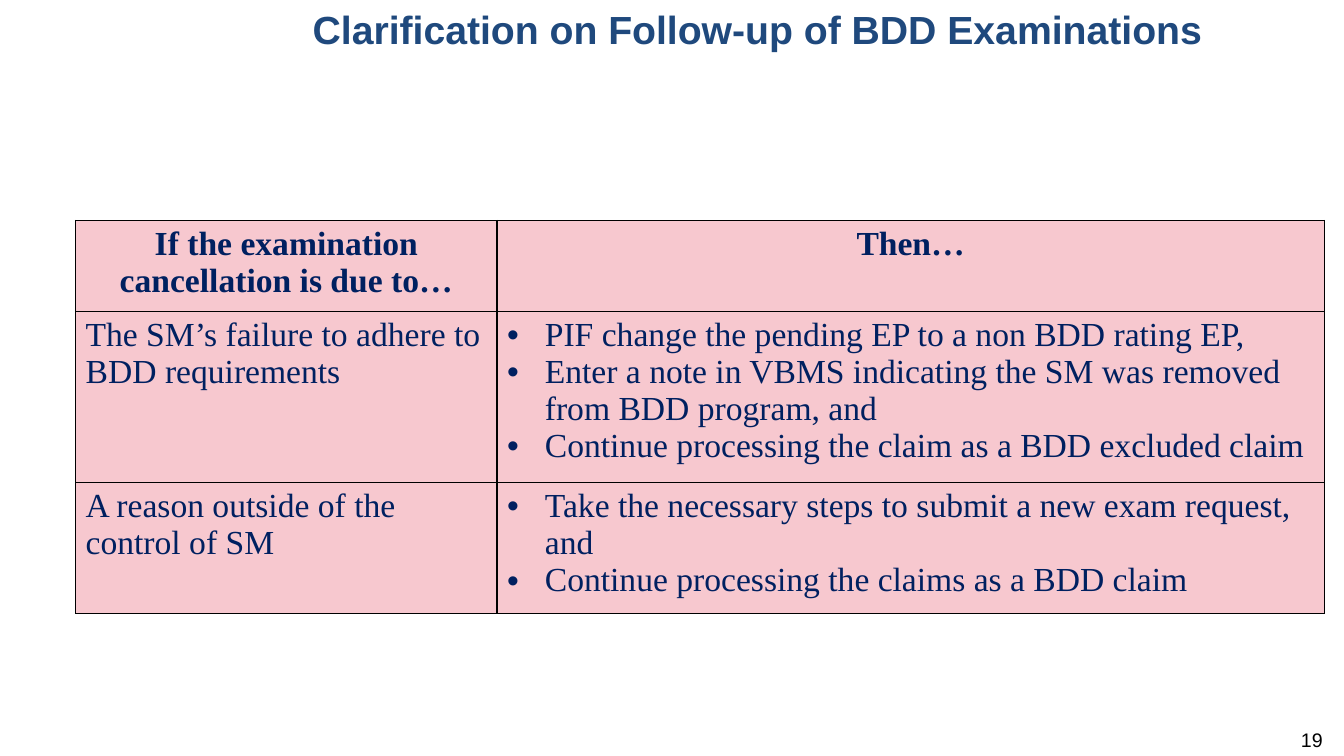
import pptx
import pptx.dml.color
import pptx.enum.text
import pptx.oxml
import pptx.oxml.ns
import pptx.util

Pt = pptx.util.Pt
ALIGN = pptx.enum.text.PP_ALIGN
NAMESPACE = pptx.oxml.ns.nsdecls("a")

HEADERS = ["If the examination cancellation is due to…", "Then…"]
CASES = [
    ("The SM’s failure to adhere to BDD requirements", [
        "PIF change the pending EP to a non BDD rating EP,",
        "Enter a note in VBMS indicating the SM was removed from BDD program, and",
        "Continue processing the claim as a BDD excluded claim",
    ]),
    ("A reason outside of the control of SM", [
        "Take the necessary steps to submit a new exam request, and",
        "Continue processing the claims as a BDD claim",
    ]),
]


def color(value):
    return pptx.dml.color.RGBColor.from_string(value)


class SlideBuilder:
    title_format = {"name": "Arial", "size": Pt(28), "bold": True}
    number_format = {"name": "Arial", "size": Pt(14), "bold": False}
    cell_format = {"name": "Times New Roman", "size": Pt(24), "bold": False}
    header_format = {**cell_format, "bold": True}
    title_color = "1F497D"
    number_color = "000000"
    cell_color = "002060"
    cell_fill = "F7C8CF"
    border_color = "000000"
    bullet_indent = Pt(27)

    def __init__(self, page):
        self.page = page

    def fill_frame(self, frame, lines, text_format, text_color, align, bullets=False):
        """Fill a text frame with one paragraph per line."""
        frame.word_wrap = True
        for index, line in enumerate(lines):
            para = frame.add_paragraph() if index else frame.paragraphs[0]
            para.alignment = align
            if bullets:
                self.add_bullet(para)
            span = para.add_run()
            span.text = line
            for name, value in text_format.items():
                setattr(span.font, name, value)
            span.font.color.rgb = color(text_color)

    def add_bullet(self, para):
        properties = para._p.get_or_add_pPr()
        properties.set("marL", str(self.bullet_indent))
        properties.set("indent", str(-self.bullet_indent))
        for tag, attribute in (("buFont", 'typeface="Arial"'), ("buChar", 'char="•"')):
            properties.append(pptx.oxml.parse_xml(f"<a:{tag} {NAMESPACE} {attribute}/>"))

    def add_text(self, bounds, text, text_format, text_color, align, margins=None):
        box = self.page.shapes.add_textbox(*map(Pt, bounds))
        for name, value in (margins or {}).items():
            setattr(box.text_frame, name, value)
        self.fill_frame(box.text_frame, [text], text_format, text_color, align)

    def add_borders(self, cell):
        properties = cell._tc.get_or_add_tcPr()
        for side in "LRTB":
            properties.append(pptx.oxml.parse_xml(
                f'<a:ln{side} {NAMESPACE} w="{Pt(1)}"><a:solidFill>'
                f'<a:srgbClr val="{self.border_color}"/></a:solidFill></a:ln{side}>'))

    def add_cell(self, cell, lines, text_format, align, bullets=False):
        self.add_borders(cell)
        cell.fill.solid()
        cell.fill.fore_color.rgb = color(self.cell_fill)
        self.fill_frame(cell.text_frame, lines, text_format, self.cell_color, align, bullets)

    def add_case_table(self, left, top, widths, heights):
        frame = self.page.shapes.add_table(
            len(heights), len(widths), Pt(left), Pt(top), Pt(sum(widths)), Pt(sum(heights)))
        table = frame.table
        table.horz_banding = False
        for column, width in zip(table.columns, widths):
            column.width = Pt(width)
        for row, height in zip(table.rows, heights):
            row.height = Pt(height)
        for index, header in enumerate(HEADERS):
            self.add_cell(table.cell(0, index), [header], self.header_format, ALIGN.CENTER)
        for index, (reason, actions) in enumerate(CASES, start=1):
            self.add_cell(table.cell(index, 0), [reason], self.cell_format, ALIGN.LEFT)
            self.add_cell(table.cell(index, 1), actions, self.cell_format, ALIGN.LEFT, True)


def main():
    deck = pptx.Presentation()
    deck.slide_width, deck.slide_height = Pt(960), Pt(540)
    builder = SlideBuilder(deck.slides.add_slide(deck.slide_layouts[6]))
    builder.add_text((168.5, 0, 745, 90.7), "Clarification on Follow-up of BDD Examinations",
                     builder.title_format, builder.title_color, ALIGN.CENTER)
    builder.add_text((728, 520, 224, 28.8), "19", builder.number_format,
                     builder.number_color, ALIGN.RIGHT, {"margin_top": 0})
    builder.add_case_table(54, 157.5, widths=(301, 591), heights=(60, 113, 87))
    deck.save("out.pptx")


if __name__ == "__main__":
    main()
